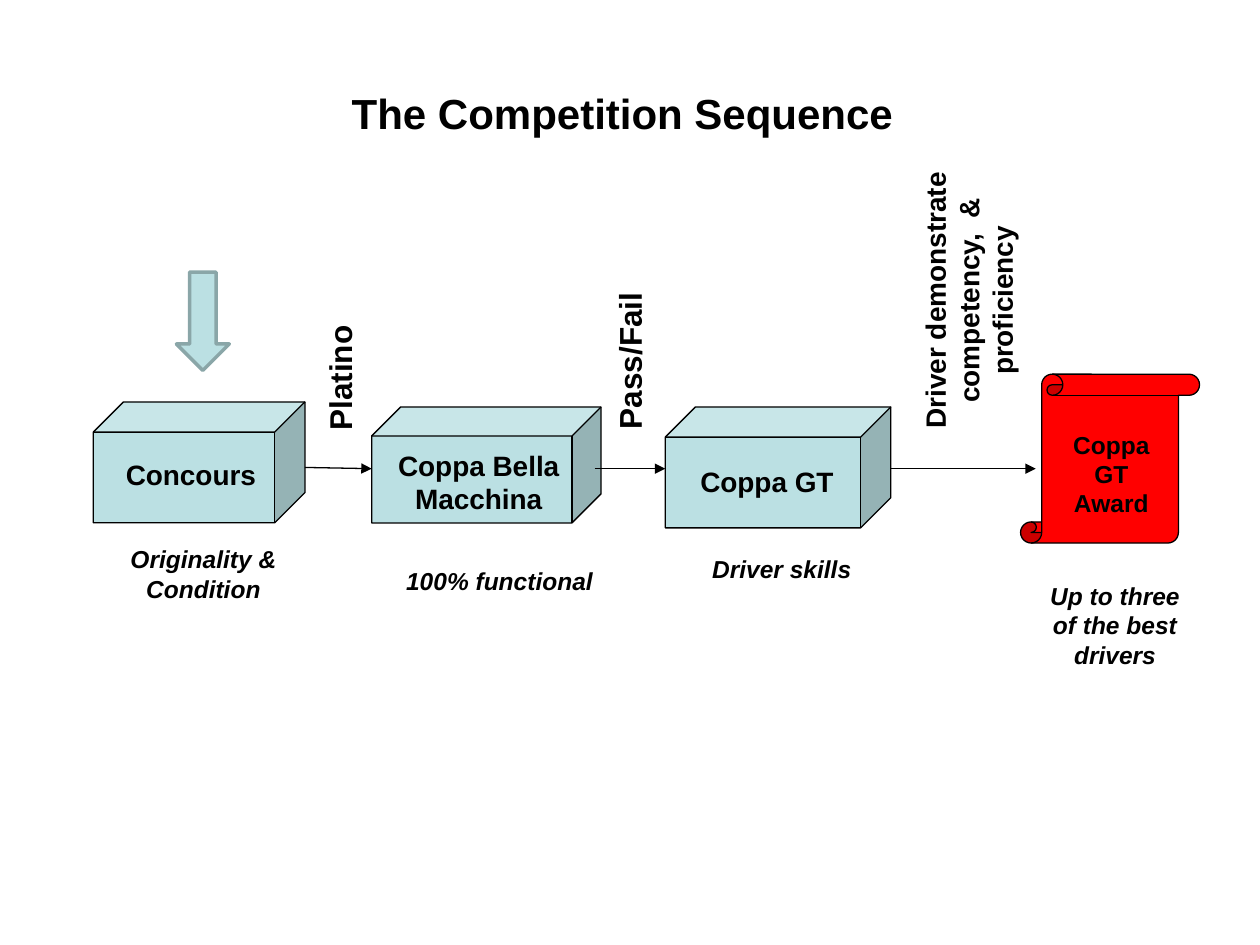
from dataclasses import dataclass

from lxml.etree import SubElement
from pptx import Presentation
from pptx.dml.color import RGBColor
from pptx.enum.shapes import MSO_CONNECTOR, MSO_SHAPE
from pptx.enum.text import MSO_ANCHOR, PP_ALIGN
from pptx.oxml.ns import qn
from pptx.util import Inches, Pt


@dataclass(frozen=True)
class Theme:
    font: str = "Arial"
    ink: str = "000000"
    stage: str = "BBE0E3"
    award: str = "FF0000"
    entry_line: str = "8AA6A8"
    title_size: int = 24
    gate_size: int = 18
    label_size: int = 16
    caption_size: int = 14
    thin: float = 0.75
    thick: float = 2


THEME = Theme()


def inches(box):
    return [Inches(length) for length in box]


def add_text(page, box, text, size=THEME.label_size, italic=False,
             align=PP_ALIGN.CENTER, anchor=MSO_ANCHOR.TOP, rotation=0, wrap=True):
    holder = page.shapes.add_textbox(*inches(box))
    holder.rotation = rotation
    frame = holder.text_frame
    frame.word_wrap = wrap
    frame.vertical_anchor = anchor
    for index, line in enumerate(text.split("\n")):
        para = frame.add_paragraph() if index else frame.paragraphs[0]
        para.alignment = align
        span = para.add_run()
        span.text = line
        span.font.name = THEME.font
        span.font.size = Pt(size)
        span.font.bold = True
        span.font.italic = italic
        span.font.color.rgb = RGBColor.from_string(THEME.ink)


def add_figure(page, preset, box, fill, line=THEME.ink, width=THEME.thin):
    figure = page.shapes.add_shape(preset, *inches(box))
    figure.shadow.inherit = False
    figure.fill.solid()
    figure.fill.fore_color.rgb = RGBColor.from_string(fill)
    figure.line.color.rgb = RGBColor.from_string(line)
    figure.line.width = Pt(width)


def add_arrow(page, start, end):
    arrow = page.shapes.add_connector(MSO_CONNECTOR.STRAIGHT, *inches(start + end))
    arrow.line.color.rgb = RGBColor.from_string(THEME.ink)
    arrow.line.width = Pt(THEME.thin)
    SubElement(arrow.line._get_or_add_ln(), qn("a:tailEnd"), type="triangle")
    SubElement(arrow._element.spPr, qn("a:effectLst"))


def add_stage(page, box, label, label_box, caption, caption_box,
              align=PP_ALIGN.LEFT, wrap=True):
    add_figure(page, MSO_SHAPE.CUBE, box, THEME.stage)
    add_text(page, label_box, label, align=align)
    add_text(page, caption_box, caption, size=THEME.caption_size, italic=True, wrap=wrap)


def add_award(page, box, label, label_box, caption, caption_box):
    add_figure(page, MSO_SHAPE.VERTICAL_SCROLL, box, THEME.award)
    add_text(page, label_box, label, size=THEME.caption_size)
    add_text(page, caption_box, caption, size=THEME.caption_size, italic=True)


def add_gate(page, box, text, start, end, size=THEME.gate_size, align=PP_ALIGN.LEFT):
    add_arrow(page, start, end)
    add_text(page, box, text, size=size, align=align, rotation=270)


def main():
    deck = Presentation()
    deck.slide_width, deck.slide_height = Inches(10), Inches(7.5)
    page = deck.slides.add_slide(deck.slide_layouts[6])

    add_text(page, (0.44, 0.27, 9, 1.25), "The Competition Sequence",
             size=THEME.title_size, anchor=MSO_ANCHOR.MIDDLE)
    add_figure(page, MSO_SHAPE.DOWN_ARROW, (1.4, 2.16, 0.42, 0.78),
               THEME.stage, THEME.entry_line, THEME.thick)

    add_stage(page, (0.74, 3.19, 1.68, 0.96), "Concours", (0.9, 3.58, 1.57, 0.37),
              "Originality &\nCondition", (0.93, 4.27, 1.37, 0.57), wrap=False)
    add_stage(page, (2.95, 3.23, 1.82, 0.92), "Coppa Bella Macchina",
              (3.05, 3.51, 1.5, 0.64), "100% functional", (2.94, 4.44, 2.05, 0.34),
              align=PP_ALIGN.CENTER)
    add_stage(page, (5.28, 3.23, 1.79, 0.96), "Coppa GT", (5.46, 3.64, 1.34, 0.37),
              "Driver skills", (5.28, 4.35, 1.85, 0.34))
    add_award(page, (8.1, 2.97, 1.42, 1.34), "Coppa GT Award",
              (8.41, 3.36, 0.82, 0.81), "Up to three of the best drivers",
              (8.22, 4.56, 1.26, 0.81))

    add_gate(page, (2.01, 2.63, 1.37, 0.4), "Platino", (2.42, 3.71), (2.95, 3.72))
    add_gate(page, (4.27, 2.58, 1.45, 0.4), "Pass/Fail", (4.72, 3.72), (5.28, 3.72))
    add_gate(page, (6.43, 1.93, 2.52, 0.91),
             "Driver demonstrate competency,  & proficiency",
             (7.07, 3.72), (8.22, 3.72), size=THEME.label_size, align=PP_ALIGN.CENTER)

    deck.save("out.pptx")


if __name__ == "__main__":
    main()
